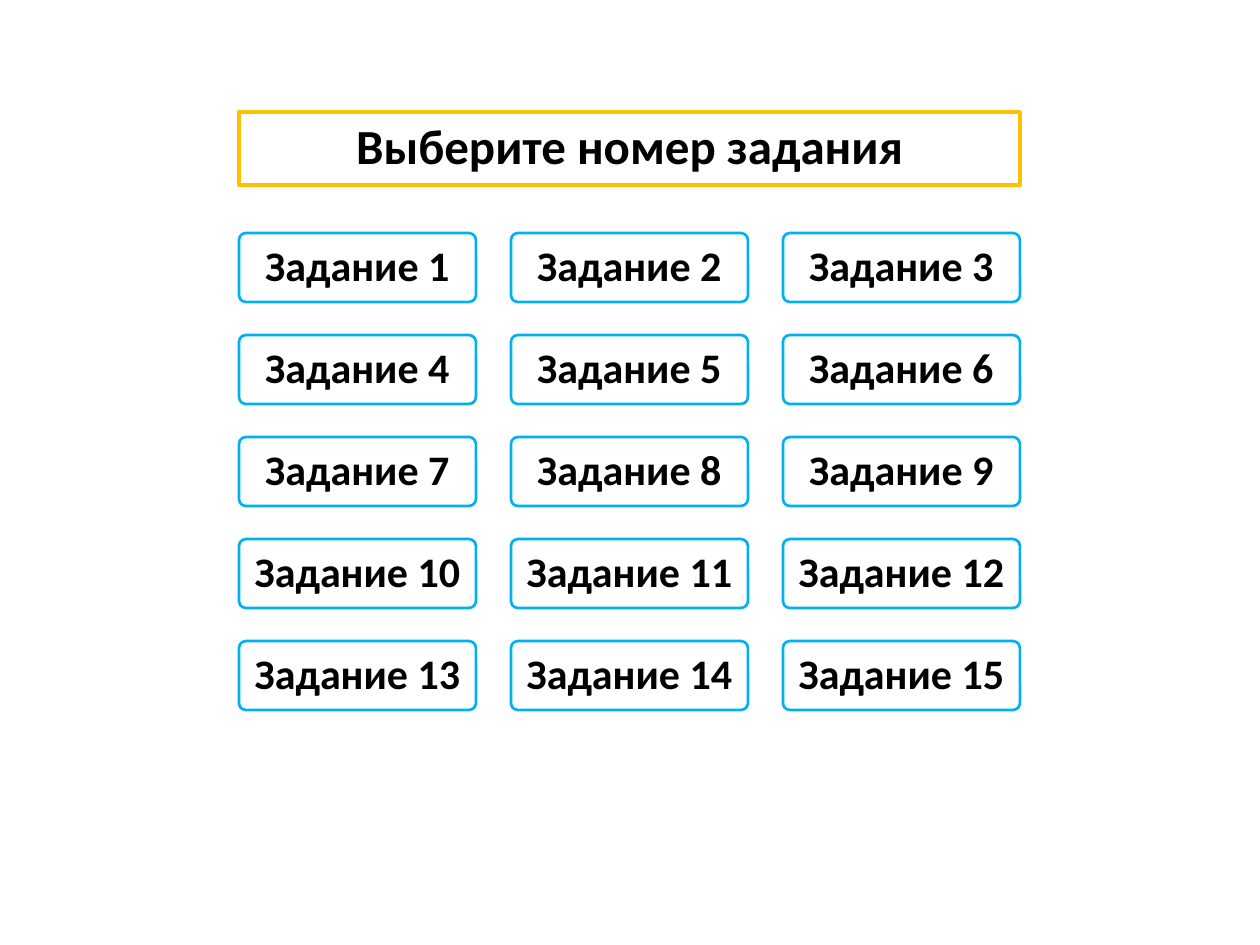
"""Build a task menu slide with a title and a grid of fifteen task buttons."""
from dataclasses import dataclass

from lxml import etree
from pptx import Presentation
from pptx import util as u
from pptx.dml.color import RGBColor
from pptx.enum import shapes, text
from pptx.oxml import ns
from pptx.shapes.autoshape import Shape

EMU_PER_PX = 914400 / 126
COLORS = {"paper": "FFFFFF", "ink": "000000", "title": "FFC000", "task": "00B0F0"}
CORNER = 0.1
COLUMNS, ROWS = 3, 5
GRID_LEFT, GRID_TOP = 239, 233
TASK_WIDTH, TASK_HEIGHT = 237, 69
COLUMN_STEP, ROW_STEP = 272, 102


@dataclass(frozen=True)
class Box:
    left: int
    top: int
    width: int
    height: int


@dataclass(frozen=True)
class Style:
    outline: str
    weight: float
    size: int


TITLE_STYLE = Style("title", 2.25, 28)
TASK_STYLE = Style("task", 1.5, 24)


def px(length: int) -> u.Emu:
    return u.Emu(round(length * EMU_PER_PX))


def color(name: str) -> RGBColor:
    return RGBColor.from_string(COLORS[name])


def format_button(button: Shape, label: str, style: Style) -> None:
    button.fill.solid()
    button.fill.fore_color.rgb = color("paper")
    button.line.color.rgb = color(style.outline)
    button.line.width = u.Pt(style.weight)
    frame = button.text_frame
    frame.text = label
    frame.word_wrap = True
    frame.vertical_anchor = text.MSO_ANCHOR.MIDDLE
    frame.margin_left = frame.margin_right = 0
    paragraph = frame.paragraphs[0]
    paragraph.alignment = text.PP_ALIGN.CENTER
    paragraph.line_spacing = 0.9
    font = paragraph.runs[0].font
    font.name = "Calibri"
    font.size = u.Pt(style.size)
    font.bold = True
    font.color.rgb = color("ink")


def place_title(title: Shape, box: Box, label: str) -> None:
    title.left, title.top = px(box.left), px(box.top)
    title.width, title.height = px(box.width), px(box.height)
    outline = etree.SubElement(title.element.spPr, ns.qn("a:prstGeom"), prst="roundRect")
    guides = etree.SubElement(outline, ns.qn("a:avLst"))
    etree.SubElement(guides, ns.qn("a:gd"), name="adj", fmla=f"val {round(CORNER * 100000)}")
    format_button(title, label, TITLE_STYLE)


def add_task(slide, box: Box, label: str) -> None:
    task = slide.shapes.add_shape(
        shapes.MSO_SHAPE.ROUNDED_RECTANGLE,
        px(box.left), px(box.top), px(box.width), px(box.height),
    )
    task.adjustments[0] = CORNER
    task.shadow.inherit = False
    format_button(task, label, TASK_STYLE)


def main() -> None:
    deck = Presentation()
    deck.slide_width, deck.slide_height = px(1260), px(945)
    slide = deck.slides.add_slide(deck.slide_layouts[5])
    grid_width = (COLUMNS - 1) * COLUMN_STEP + TASK_WIDTH
    place_title(slide.shapes.title, Box(GRID_LEFT, 112, grid_width, 73), "Выберите номер задания")
    for index in range(COLUMNS * ROWS):
        row, column = divmod(index, COLUMNS)
        left = GRID_LEFT + column * COLUMN_STEP
        top = GRID_TOP + row * ROW_STEP
        add_task(slide, Box(left, top, TASK_WIDTH, TASK_HEIGHT), f"Задание {index + 1}")
    deck.save("out.pptx")


if __name__ == "__main__":
    main()
